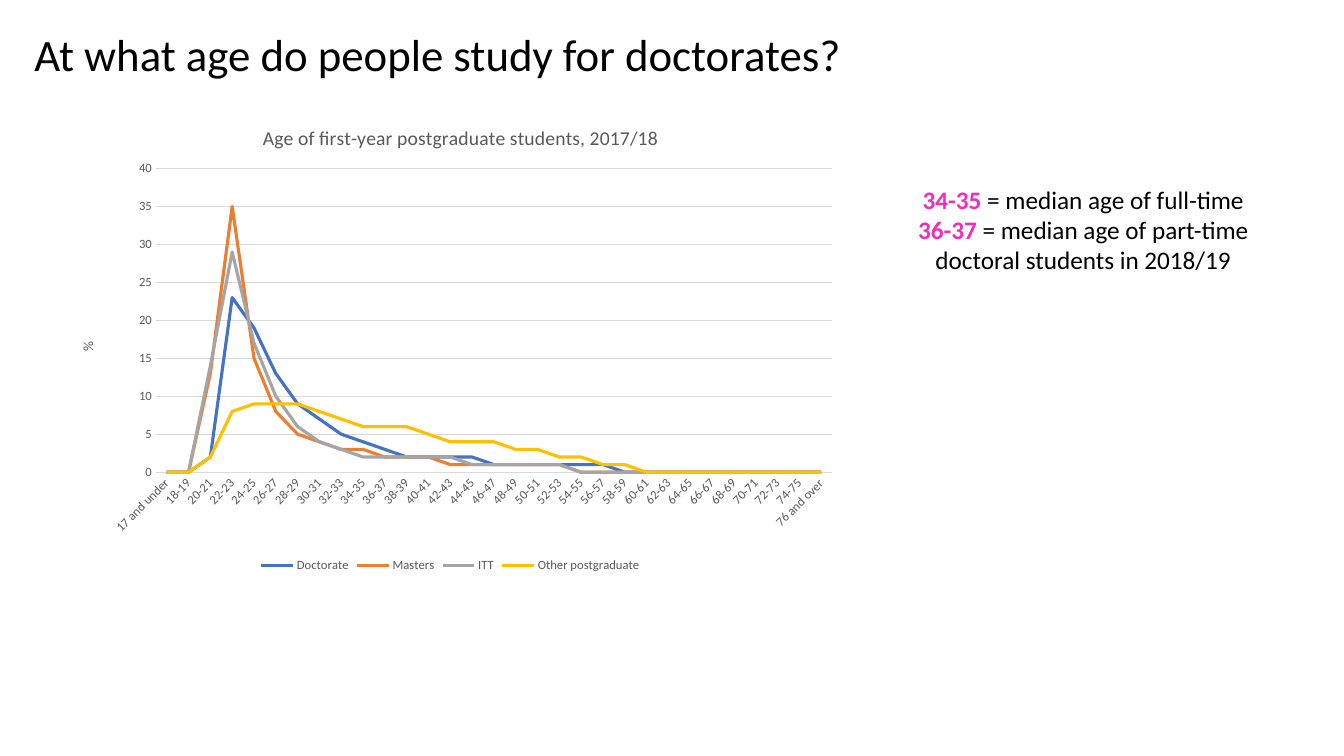
"""Build a slide on the age at which people study for doctorates."""
import dataclasses

import pptx
import pptx.chart.data
import pptx.dml.color
import pptx.enum.chart
import pptx.enum.text
import pptx.oxml
import pptx.oxml.ns
import pptx.util

Pt = pptx.util.Pt
qn = pptx.oxml.ns.qn
WIDE, HIGH = pptx.util.Inches(13.33), pptx.util.Inches(7.5)


@dataclasses.dataclass(frozen=True)
class Theme:
    """Font, colours and type sizes of the slide."""
    font: str = "Calibri"
    ink: str = "000000"
    grey: str = "595959"
    rule: str = "D9D9D9"
    pink: str = "F22CBE"
    lines: tuple = ("4472C4", "ED7D31", "A5A5A5", "FFC000")
    head: int = 32
    note: int = 18
    chart: int = 14
    unit: int = 10
    tick: int = 9


THEME = Theme()
AGES = ["17 and under", *(f"{a}-{a + 1}" for a in range(18, 76, 2)), "76 and over"]
SHARES = {
    "Doctorate": [0, 0, 2, 23, 19, 13, 9, 7, 5, 4, 3, 2, 2, 2, 2] + [1] * 6,
    "Masters": [0, 0, 13, 35, 15, 8, 5, 4, 3, 3, 2, 2, 2] + [1] * 6,
    "ITT": [0, 0, 14, 29, 17, 10, 6, 4, 3, 2, 2, 2, 2, 2] + [1] * 5,
    "Other postgraduate": [0, 0, 2, 8, 9, 9, 9, 8, 7, 6, 6, 6, 5, 4, 4, 4,
                           3, 3, 2, 2, 1, 1],
}
NOTE = [("34-35 ", "= median age of full-time"),
        ("36-37 ", "= median age of part-time doctoral students in 2018/19")]


def place(x, y, w, h):
    """Turn shares of the slide into a box of lengths."""
    return int(x * WIDE), int(y * HIGH), int(w * WIDE), int(h * HIGH)


def style(font, size, hue, bold=False):
    """Set the face, size, colour and weight of a font."""
    font.name, font.size, font.bold = THEME.font, Pt(size), bold
    font.color.rgb = pptx.dml.color.RGBColor.from_string(hue)


def write(para, text, size, hue, bold=False):
    """Add one styled run to a paragraph."""
    run = para.add_run()
    run.text = text
    style(run.font, size, hue, bold)


def stroke(line, hue, width):
    """Give a line its colour and width."""
    line.color.rgb = pptx.dml.color.RGBColor.from_string(hue)
    line.width = Pt(width)


def pin(node, spot, **parts):
    """Fix a chart part at shares of the chart's size."""
    old = node.find(qn("c:layout"))
    at = 0 if old is None else node.index(old)
    if old is not None:
        node.remove(old)
    inner = '<c:layoutTarget val="inner"/>' if "w" in parts else ""
    modes = "".join(f'<c:{k}Mode val="edge"/>' for k in "xy")
    sizes = "".join(f'<c:{k} val="{v}"/>' for k, v in {**spot, **parts}.items())
    node.insert(at, pptx.oxml.parse_xml(
        f'<c:layout {pptx.oxml.ns.nsdecls("c")}><c:manualLayout>'
        f"{inner}{modes}{sizes}</c:manualLayout></c:layout>"))


def label(title, text, size, spot):
    """Write a chart or axis title and fix its place."""
    write(title.text_frame.paragraphs[0], text, size, THEME.grey)
    pin(title.element, spot)


def turn(root, where, angle):
    """Rotate the text found in a part of the chart."""
    body = root.find(".//" + "/".join(qn(n) for n in where.split()))
    body.set("rot", str(angle * 60000))
    body.set("vert", "horz")


def add_head(slide, box):
    """Fill the title placeholder."""
    head = slide.shapes.title
    head.left, head.top, head.width, head.height = box
    frame = head.text_frame
    frame.vertical_anchor = pptx.enum.text.MSO_ANCHOR.MIDDLE
    para = frame.paragraphs[0]
    para.alignment = pptx.enum.text.PP_ALIGN.LEFT
    para.line_spacing = 0.9
    write(para, "At what age do people study for doctorates?", THEME.head, THEME.ink)


def add_note(slide, box):
    """Add the median ages beside the chart."""
    frame = slide.shapes.add_textbox(*box).text_frame
    frame.word_wrap = True
    frame.auto_size = pptx.enum.text.MSO_AUTO_SIZE.SHAPE_TO_FIT_TEXT
    for i, (age, text) in enumerate(NOTE):
        para = frame.add_paragraph() if i else frame.paragraphs[0]
        para.alignment = pptx.enum.text.PP_ALIGN.CENTER
        write(para, age, THEME.note, THEME.pink, True)
        write(para, text, THEME.note, THEME.ink)


def add_plot(slide, box):
    """Add the line chart of ages by type of course."""
    data = pptx.chart.data.CategoryChartData(number_format="0")
    data.categories = AGES
    for name, vals in SHARES.items():
        data.add_series(name, vals + [0] * (len(AGES) - len(vals)))
    kind = pptx.enum.chart.XL_CHART_TYPE.LINE
    chart = slide.shapes.add_chart(kind, *box, data).chart
    style(chart.font, THEME.unit, THEME.ink)
    chart.plots[0].vary_by_categories = False
    for line, hue in zip(chart.plots[0].series, THEME.lines):
        line.smooth = False
        line.marker.style = pptx.enum.chart.XL_MARKER_STYLE.NONE
        stroke(line.format.line, hue, 2.25)

    label(chart.chart_title, "Age of first-year postgraduate students, 2017/18",
          THEME.chart, {"x": 0.26, "y": 0.04})
    chart.has_legend = True
    chart.legend.position = pptx.enum.chart.XL_LEGEND_POSITION.BOTTOM
    chart.legend.include_in_layout = False
    style(chart.legend.font, THEME.tick, THEME.grey)

    cat, val = chart.category_axis, chart.value_axis
    for axis in (cat, val):
        axis.major_tick_mark = pptx.enum.chart.XL_TICK_MARK.NONE
        axis.minor_tick_mark = pptx.enum.chart.XL_TICK_MARK.NONE
        style(axis.tick_labels.font, THEME.tick, THEME.grey)
    stroke(cat.format.line, THEME.rule, 0.75)
    val.format.line.fill.background()
    stroke(val.major_gridlines.format.line, THEME.rule, 0.75)
    val.minimum_scale, val.maximum_scale, val.major_unit = 0, 40, 5
    val.tick_labels.number_format = "0"
    val.tick_labels.number_format_is_linked = False
    label(val.axis_title, "%", THEME.unit, {"x": 0.03, "y": 0.5})

    turn(chart.element, "c:catAx c:txPr a:bodyPr", -45)
    turn(chart.element, "c:valAx c:title c:tx c:rich a:bodyPr", -90)
    area = chart.element.find(".//" + qn("c:plotArea"))
    pin(area, {"x": 0.13, "y": 0.14}, w=0.85, h=0.64)


def main():
    """Build and save the slide."""
    deck = pptx.Presentation()
    deck.slide_width, deck.slide_height = WIDE, HIGH
    slide = deck.slides.add_slide(deck.slide_layouts[5])
    add_head(slide, place(0.018, -0.021, 0.964, 0.193))
    add_note(slide, place(0.644, 0.237, 0.324, 0.135))
    add_plot(slide, place(0.039, 0.135, 0.592, 0.628))
    deck.save("out.pptx")


if __name__ == "__main__":
    main()
